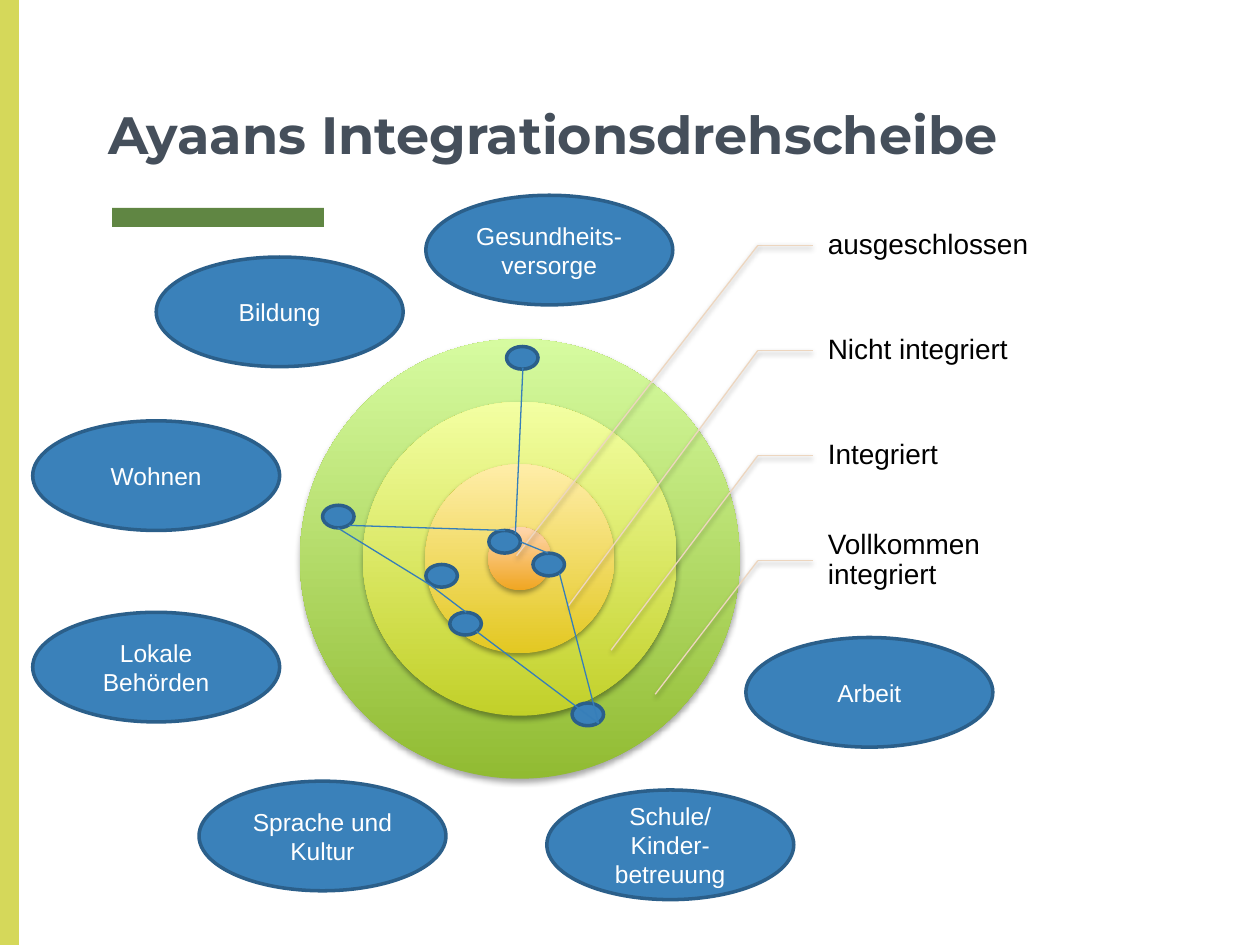
from dataclasses import dataclass

from lxml import etree
from pptx import Presentation
from pptx.dml.color import RGBColor
from pptx.enum.shapes import MSO_CONNECTOR, MSO_SHAPE
from pptx.enum.text import MSO_ANCHOR, PP_ALIGN
from pptx.oxml.ns import qn
from pptx.util import Inches, Pt

RECT, OVAL = MSO_SHAPE.RECTANGLE, MSO_SHAPE.OVAL
STRAIGHT = MSO_CONNECTOR.STRAIGHT
MIDDLE, BOTTOM = MSO_ANCHOR.MIDDLE, MSO_ANCHOR.BOTTOM
LEFT, CENTER = PP_ALIGN.LEFT, PP_ALIGN.CENTER

COLS, ROWS = 100, 75
BLUE, NAVY, LINK, LEADER = "3A81BA", "2B5F8A", "367EB9", "EDD6BF"
TITLE_FONT = {"name": "Montserrat", "size": Pt(30), "bold": True}
LABEL_FONT = {"name": "Arial", "size": Pt(16)}
TOPIC_FONT = {"name": "Arial", "size": Pt(14)}


@dataclass
class Box:
    col: float
    row: float
    cols: float
    rows: float


@dataclass
class Topic:
    col: float
    row: float
    text: str


@dataclass
class Ring:
    diameter: float
    dark: str
    light: str


@dataclass
class Level:
    text: str
    tip: tuple[float, float]


CENTRE = (41.25, 44.35)
RINGS = [
    Ring(34.9, "91BB32", "D6FBA0"),
    Ring(24.9, "C2D029", "F3FFA2"),
    Ring(15, "E3C822", "FFEDA8"),
    Ring(5, "F0A621", "FFD6AD"),
]
LEVELS = [
    Level("ausgeschlossen", (41, 44.1)),
    Level("Nicht integriert", (45.1, 48.1)),
    Level("Integriert", (48.5, 51.6)),
    Level("Vollkommen integriert", (52, 55.1)),
]
LEVEL_TOP, LEVEL_STEP = 15.3, 8.34
LEVEL_COL, LEADER_COL = 64.5, 60.15
TOPICS = [
    Topic(33.8, 15.5, "Gesundheits-versorge"),
    Topic(43.4, 62.7, "Schule/\nKinder-betreuung"),
    Topic(2.6, 48.6, "Lokale Behörden"),
    Topic(2.6, 33.4, "Wohnen"),
    Topic(12.4, 20.4, "Bildung"),
    Topic(15.8, 62, "Sprache und Kultur"),
    Topic(59.2, 50.6, "Arbeit"),
]
DOTS = [(40.2, 27.5), (33.8, 44.8), (35.7, 48.6), (45.4, 55.8),
        (42.3, 43.9), (38.8, 42.1), (25.6, 40.1)]
LINKS = [
    ((41.5, 29.2), (40.9, 42.4)),
    ((40.1, 42.1), (27.7, 41.7)),
    ((26.8, 41.9), (34.1, 46.4)),
    ((34.1, 46.4), (37, 48.6)),
    ((37.8, 50.1), (47.5, 57.4)),
    ((47.5, 57.4), (44.4, 45.5)),
    ((43.5, 43.9), (41.3, 43)),
]

prs = Presentation()
prs.slide_width, prs.slide_height = Inches(10), Inches(7.5)
s = prs.slides.add_slide(prs.slide_layouts[6])


def x(col: float) -> int:
    return round(prs.slide_width * col / COLS)


def y(row: float) -> int:
    return round(prs.slide_height * row / ROWS)


def place(box: Box) -> tuple[int, int, int, int]:
    return x(box.col), y(box.row), x(box.cols), y(box.rows)


def rgb(value: str) -> RGBColor:
    return RGBColor.from_string(value)


def set_attrs(target, values: dict) -> None:
    for name, value in values.items():
        setattr(target, name, value)


def add_effects(sp, alpha: int = 0, dist: float = 0) -> None:
    effects = etree.SubElement(sp._element.spPr, qn("a:effectLst"))
    if alpha:
        shadow = etree.SubElement(
            effects, qn("a:outerShdw"), blurRad=str(Pt(3.1)),
            dist=str(Pt(dist)), dir="5400000", rotWithShape="0")
        color = etree.SubElement(shadow, qn("a:srgbClr"), val="000000")
        etree.SubElement(color, qn("a:alpha"), val=str(alpha * 1000))


def add_shape(kind, box: Box, fill: str, line: str = ""):
    sp = s.shapes.add_shape(kind, *place(box))
    sp.fill.solid()
    sp.fill.fore_color.rgb = rgb(fill)
    if line:
        sp.line.color.rgb = rgb(line)
        sp.line.width = Pt(2)
    else:
        sp.line.fill.background()
    sp.shadow.inherit = False
    return sp


def add_ring(ring: Ring) -> None:
    d = ring.diameter
    box = Box(CENTRE[0] - d / 2, CENTRE[1] - d / 2, d, d)
    sp = s.shapes.add_shape(OVAL, *place(box))
    sp.fill.gradient()
    sp.fill.gradient_angle = 90
    for stop, color in zip(sp.fill.gradient_stops, (ring.dark, ring.light)):
        stop.color.rgb = rgb(color)
    sp.line.fill.background()
    add_effects(sp, 35, 1.8)


def write(sp, text: str, font: dict, color: str, anchor=MIDDLE,
          align=LEFT, spacing: float = 1.0) -> None:
    tf = sp.text_frame
    set_attrs(tf, {"word_wrap": True, "vertical_anchor": anchor})
    for i, line in enumerate(text.split("\n")):
        p = tf.add_paragraph() if i else tf.paragraphs[0]
        set_attrs(p, {"alignment": align, "line_spacing": spacing})
        r = p.add_run()
        r.text = line
        set_attrs(r.font, font)
        r.font.color.rgb = rgb(color)


def add_text(box: Box, margins: dict, text: str, font: dict, color: str,
             anchor=MIDDLE, spacing: float = 1.0):
    sp = s.shapes.add_textbox(*place(box))
    set_attrs(sp.text_frame, {f"margin_{k}": Inches(v) for k, v in margins.items()})
    write(sp, text, font, color, anchor, spacing=spacing)
    return sp


def add_line(start: tuple[float, float], end: tuple[float, float], color: str,
             alpha: int = 0):
    line = s.shapes.add_connector(
        STRAIGHT, x(start[0]), y(start[1]), x(end[0]), y(end[1]))
    line.line.color.rgb = rgb(color)
    line.line.width = Pt(0.75)
    add_effects(line, alpha, 1.6)
    return line


def add_level(index: int, level: Level) -> None:
    box = Box(LEVEL_COL, LEVEL_TOP + index * LEVEL_STEP, 17.5, LEVEL_STEP)
    margins = {"left": 0.12, "top": 0.02, "right": 0.02, "bottom": 0.02}
    label = add_text(box, margins, level.text, LABEL_FONT, "000000", spacing=0.9)
    row = box.row + box.rows / 2
    elbow = (LEADER_COL, row)
    add_line(elbow, (LEVEL_COL, row), LEADER, 38).end_connect(label, 1)
    add_line(elbow, level.tip, LEADER, 38)


def main() -> None:
    add_shape(RECT, Box(8.9, 16.5, 16.8, 1.5), "608643")
    add_shape(RECT, Box(0, 0, 1.5, ROWS), "D5D85A")
    margins = dict.fromkeys(("left", "top", "right", "bottom"), 0.1)
    add_text(Box(7.6, 0, 84.9, 14.1), margins, "Ayaans Integrationsdrehscheibe",
             TITLE_FONT, "454F5B", BOTTOM)
    for ring in RINGS:
        add_ring(ring)
    for index, level in enumerate(LEVELS):
        add_level(index, level)
    for topic in TOPICS:
        sp = add_shape(OVAL, Box(topic.col, topic.row, 19.6, 8.7), BLUE, NAVY)
        write(sp, topic.text, TOPIC_FONT, "FFFFFF", align=CENTER)
    for col, row in DOTS:
        add_shape(OVAL, Box(col, row, 2.5, 1.8), BLUE, NAVY)
    for start, end in LINKS:
        add_line(start, end, LINK)
    prs.save("out.pptx")


if __name__ == "__main__":
    main()
